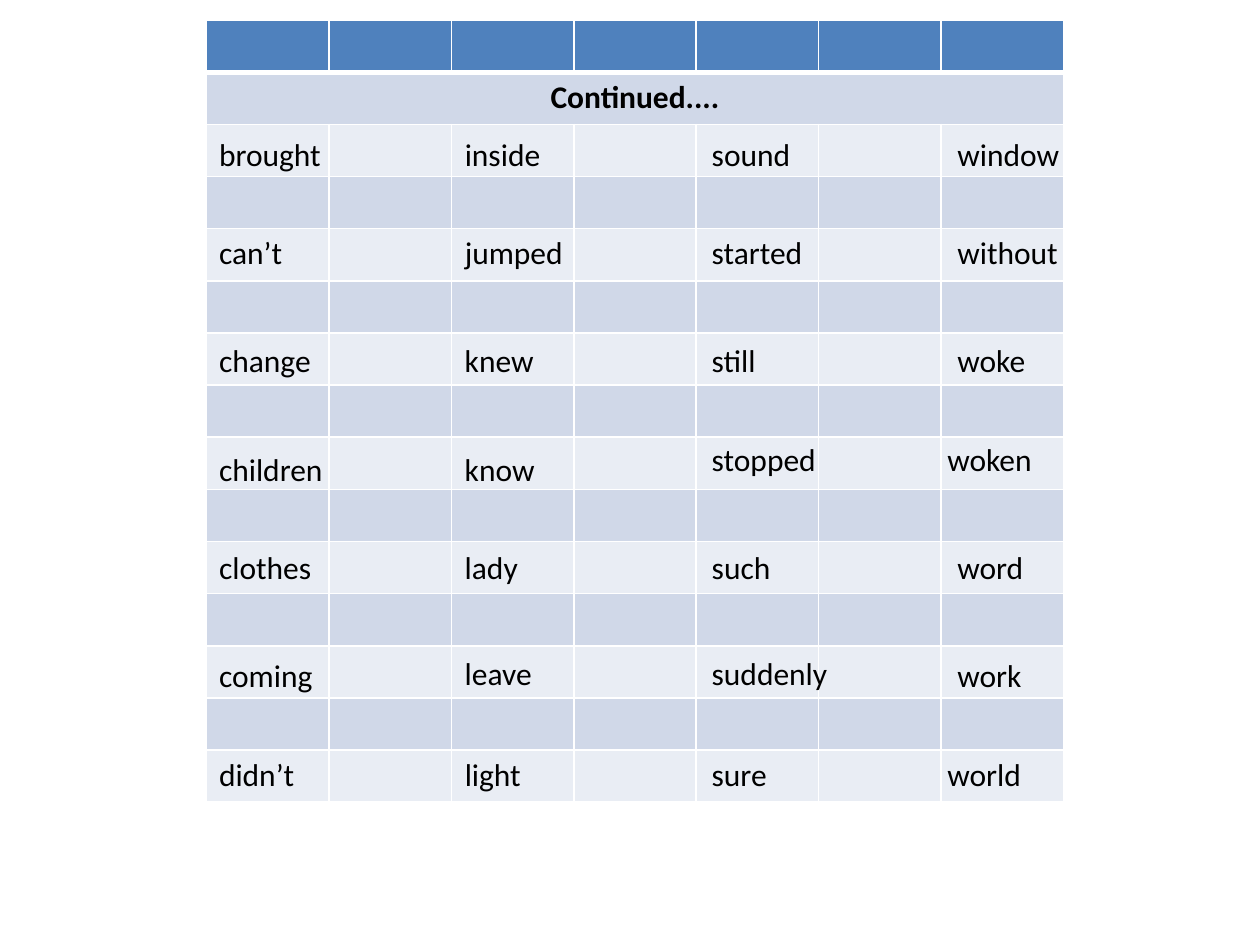
"""Build a word-list slide: a banded table with words laid over it."""
import pptx
import pptx.enum.text
import pptx.oxml.ns
import pptx.util
from lxml import etree
from pptx.dml.color import RGBColor
from pptx.util import Inches, Pt

COLORS = {
    "header": "4F81BD",
    "dark_band": "D0D8E8",
    "light_band": "E9EDF4",
    "border": "FFFFFF",
    "text": "000000",
}
FONT = "Calibri"
ROWS, COLUMNS = 15, 7
TABLE_LEFT, TABLE_TOP, TABLE_WIDTH, TABLE_HEIGHT = 1.64, 0.16, 6.8, 6.21
WORD_LEFTS = (1.64, 3.59, 5.55, 7.5)
SHIFTED_LEFT = {"woken": 7.42, "world": 7.42}
SHIFTED_TOP = {"stopped": 3.44, "woken": 3.44, "leave": 5.14, "suddenly": 5.14}
WORD_ROWS = (
    (1.02, (("brought", 1.02), ("inside", 1.25), ("sound", 1.09), ("window", 1.09))),
    (1.8, (("can’t", 0.94), ("jumped", 1.02), ("started", 0.94), ("without", 1.09))),
    (2.66, (("change", 0.94), ("knew", 0.94), ("still", 1.09), ("woke", 0.94))),
    (3.52, (("children", 1.17), ("know", 0.94), ("stopped", 1.09), ("woken", 1.25))),
    (4.3, (("clothes", 1.09), ("lady", 0.94), ("such", 1.02), ("word", 0.94))),
    (5.16, (("coming", 1.02), ("leave", 0.94), ("suddenly", 1.33), ("work", 0.94))),
    (5.94, (("didn’t", 1.17), ("light", 1.25), ("sure", 1.33), ("world", 0.94))),
)


def format_paragraph(paragraph, bold=False):
    """Set the font shared by all text on the slide."""
    paragraph.font.name = FONT
    paragraph.font.size = Pt(18)
    paragraph.font.bold = bold
    paragraph.font.color.rgb = RGBColor.from_string(COLORS["text"])


def set_borders(cell, top=1, bottom=1):
    """Draw the four borders of a cell, with widths in points."""
    properties = cell._tc.get_or_add_tcPr()
    qualify = pptx.oxml.ns.qn
    for side, width in (("L", 1), ("R", 1), ("T", top), ("B", bottom)):
        line = etree.SubElement(properties, qualify(f"a:ln{side}"), w=str(Pt(width)))
        fill = etree.SubElement(line, qualify("a:solidFill"))
        etree.SubElement(fill, qualify("a:srgbClr"), val=COLORS["border"])


def row_color(row):
    """Return the fill of a table row."""
    if row == 0:
        return COLORS["header"]
    return COLORS["dark_band" if row % 2 else "light_band"]


def add_word_table(slide):
    """Add the banded table with its merged heading row."""
    table = slide.shapes.add_table(
        ROWS, COLUMNS, Inches(TABLE_LEFT), Inches(TABLE_TOP),
        Inches(TABLE_WIDTH), Inches(TABLE_HEIGHT),
    ).table
    for row in range(ROWS):
        for column in range(COLUMNS):
            cell = table.cell(row, column)
            set_borders(cell, top=3 if row == 1 else 1, bottom=3 if row == 0 else 1)
            cell.fill.solid()
            cell.fill.fore_color.rgb = RGBColor.from_string(row_color(row))
    heading = table.cell(1, 0)
    heading.merge(table.cell(1, COLUMNS - 1))
    heading.text = "Continued...."
    paragraph = heading.text_frame.paragraphs[0]
    paragraph.alignment = pptx.enum.text.PP_ALIGN.CENTER
    format_paragraph(paragraph, bold=True)


def add_word(slide, word, left, top, width):
    """Add one word in a text box."""
    shape = slide.shapes.add_textbox(Inches(left), Inches(top), Inches(width), Inches(0.4))
    frame = shape.text_frame
    frame.word_wrap = True
    frame.auto_size = pptx.enum.text.MSO_AUTO_SIZE.SHAPE_TO_FIT_TEXT
    frame.text = word
    format_paragraph(frame.paragraphs[0])


def main():
    """Build and save the presentation."""
    presentation = pptx.Presentation()
    presentation.slide_width = Inches(10)
    presentation.slide_height = Inches(7.5)
    slide = presentation.slides.add_slide(presentation.slide_layouts[6])
    add_word_table(slide)
    for top, words in WORD_ROWS:
        for left, (word, width) in zip(WORD_LEFTS, words):
            add_word(slide, word, SHIFTED_LEFT.get(word, left),
                     SHIFTED_TOP.get(word, top), width)
    presentation.save("out.pptx")


if __name__ == "__main__":
    main()
